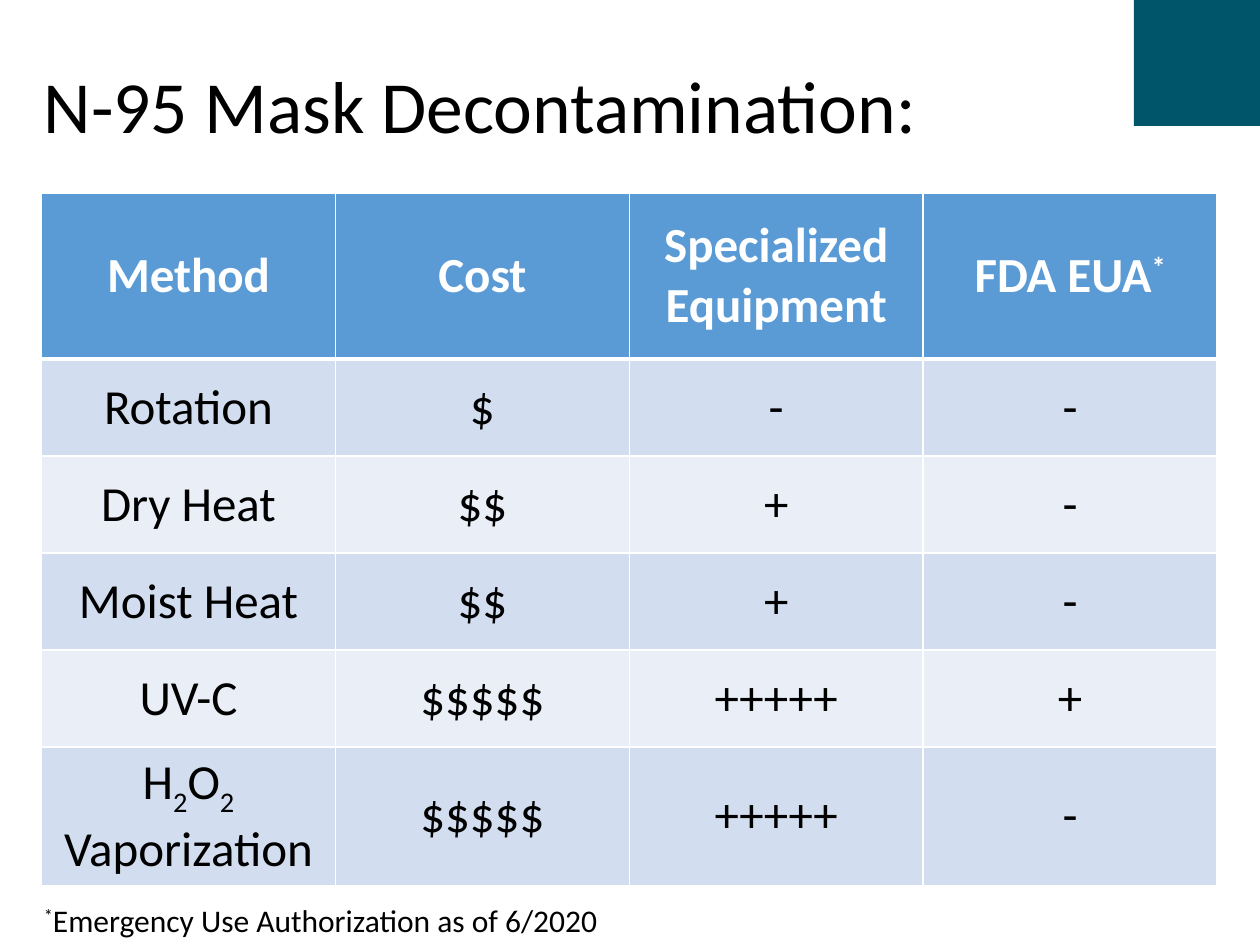
from dataclasses import dataclass

from lxml import etree
from pptx import Presentation
from pptx.dml.color import RGBColor
from pptx.enum import text
from pptx.oxml import ns
from pptx.util import Inches, Pt


@dataclass(frozen=True)
class Theme:
    font: str = "Calibri"
    ink: str = "000000"
    white: str = "FFFFFF"
    swoosh: str = "00556A"
    header: str = "5B9BD5"
    bands: tuple = ("D2DEEF", "EAEFF7")
    title_size: int = 42
    table_size: int = 28
    note_size: int = 18


SUPER, SUB = 30, -25
HEADERS = ["Method", "Cost", "Specialized Equipment", [("FDA EUA", 0), ("*", SUPER)]]
METHODS = [
    ["Rotation", "$", "-", "-"],
    ["Dry Heat", "$$", "+", "-"],
    ["Moist Heat", "$$", "+", "-"],
    ["UV-C", "$$$$$", "+++++", "+"],
    [[("H", 0), ("2", SUB), ("O", 0), ("2", SUB), (" Vaporization", 0)],
     "$$$$$", "+++++", "-"],
]
ROW_HEIGHTS = [1.32, 0.77, 0.77, 0.77, 0.77, 1.03]
NOTE = [("*", SUPER), ("Emergency Use Authorization as of 6/2020", 0)]


def bezier(p0, p1, p2, p3, steps=60):
    """Points along a cubic curve, without its start."""
    points = []
    for i in range(1, steps + 1):
        t = i / steps
        weights = ((1 - t) ** 3, 3 * t * (1 - t) ** 2, 3 * t * t * (1 - t), t ** 3)
        points.append(tuple(sum(w * p[axis] for w, p in zip(weights, (p0, p1, p2, p3)))
                            for axis in (0, 1)))
    return points


class SlideBuilder:
    def __init__(self, slide, theme):
        self.s = slide
        self.theme = theme

    def add_runs(self, p, content, size, color, bold=False):
        """Fill a paragraph from a string or a list of (text, baseline percent)."""
        runs = [(content, 0)] if isinstance(content, str) else content
        style = {"name": self.theme.font, "size": Pt(size), "bold": bold}
        for words, baseline in runs:
            r = p.add_run()
            r.text = words
            for name, value in style.items():
                setattr(r.font, name, value)
            r.font.color.rgb = RGBColor.from_string(color)
            if baseline:
                r.font._element.set("baseline", str(baseline * 1000))

    def freeform(self, points, color):
        builder = self.s.shapes.build_freeform(*points[0], scale=Inches(1))
        builder.add_line_segments(points[1:], close=True)
        sp = builder.convert_to_shape()
        sp.shadow.inherit = False
        sp.fill.solid()
        sp.fill.fore_color.rgb = RGBColor.from_string(color)
        sp.line.fill.background()

    def textbox(self, box, content, size, line_spacing=None, **frame):
        tf = self.s.shapes.add_textbox(*map(Inches, box)).text_frame
        for name, value in frame.items():
            setattr(tf, name, value)
        p = tf.paragraphs[0]
        p.line_spacing = line_spacing
        self.add_runs(p, content, size, self.theme.ink)

    def borders(self, cell, widths):
        tc_pr = cell._tc.get_or_add_tcPr()
        for side, width in zip("LRTB", widths):
            ln = etree.SubElement(tc_pr, ns.qn(f"a:ln{side}"), w=str(Pt(width)))
            fill = etree.SubElement(ln, ns.qn("a:solidFill"))
            etree.SubElement(fill, ns.qn("a:srgbClr"), val=self.theme.white)

    def table(self, box, rows, heights):
        th = self.theme
        tbl = self.s.shapes.add_table(len(rows), len(rows[0]), *map(Inches, box)).table
        tbl.horz_banding = False
        for i, (row, height) in enumerate(zip(rows, heights)):
            tbl.rows[i].height = Inches(height)
            is_header = i == 0
            fill = th.header if is_header else th.bands[(i - 1) % 2]
            for j, content in enumerate(row):
                cell = tbl.cell(i, j)
                self.borders(cell, (1, 1, 3 if i == 1 else 1, 3 if is_header else 1))
                cell.fill.solid()
                cell.fill.fore_color.rgb = RGBColor.from_string(fill)
                cell.vertical_anchor = text.MSO_ANCHOR.MIDDLE
                p = cell.text_frame.paragraphs[0]
                p.alignment = text.PP_ALIGN.CENTER
                self.add_runs(p, content, th.table_size,
                              th.white if is_header else th.ink, is_header)


def main():
    prs = Presentation()
    prs.slide_width, prs.slide_height = Inches(10), Inches(7.5)
    theme = Theme()
    slide = SlideBuilder(prs.slides.add_slide(prs.slide_layouts[6]), theme)

    corner, tip, tail = (10, 0), (9.99, 1.29), (0.03, 0.1)
    slide.freeform([(0, 0), corner,
                    *bezier(corner, (10, 0.14), (9.99, 1.15), tip),
                    *bezier(tip, (9.98, 0), (3.36, 0.1), tail)], theme.swoosh)
    slide.textbox((0.25, 0.4, 9.06, 1.6), "N-95 Mask Decontamination:",
                  theme.title_size, line_spacing=0.9, word_wrap=True,
                  margin_top=Inches(0.16))
    slide.table((0.33, 1.53, 9.33, 5.43), [HEADERS, *METHODS], ROW_HEIGHTS)
    slide.textbox((0.25, 7.1, 4.66, 0.4), NOTE, theme.note_size, word_wrap=False,
                  auto_size=text.MSO_AUTO_SIZE.SHAPE_TO_FIT_TEXT)
    prs.save("out.pptx")


if __name__ == "__main__":
    main()
